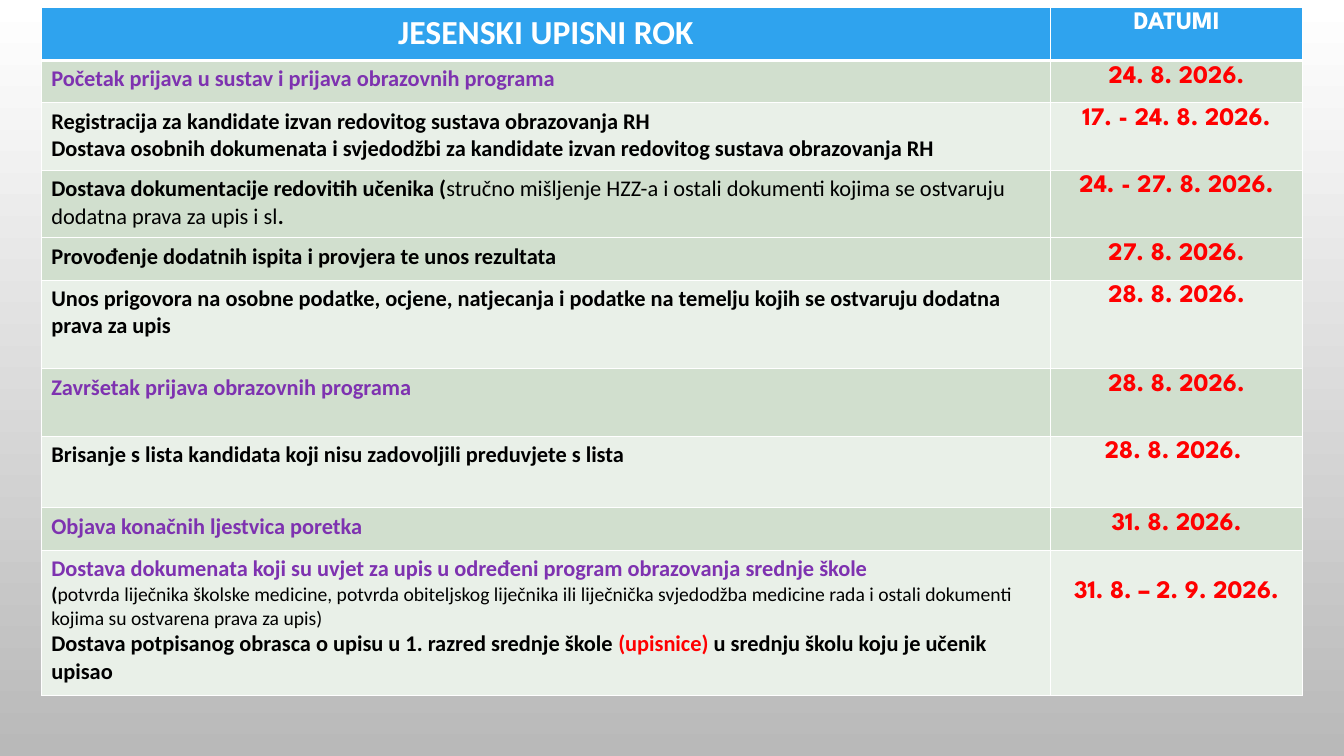
from lxml import etree
from pptx import Presentation
from pptx.dml.color import RGBColor
from pptx.enum.text import PP_ALIGN as Align
from pptx.oxml.ns import qn
from pptx.util import Inches, Pt

COLORS = {
    "white": "FFFFFF", "grey": "B9B9B9", "blue": "2FA3EE", "purple": "7E32B0",
    "black": "000000", "red": "FF0000", "dark": "D1DFCE", "light": "E9F0E8",
}
TEXT_FONT, DATE_FONT = "Calibri", "League Spartan"
LEFT, TOP = 0.41, 0.07
COL_WIDTHS = [10.01, 2.5]
HEADER_HEIGHT = 0.53


def run(text, color="black", bold=True, size=16, font=TEXT_FONT):
    return text, color, bold, size, font


HEADER = [run("JESENSKI UPISNI ROK", "white", size=24),
          run("DATUMI", "white", size=18, font=DATE_FONT)]

# Row height, fill, paragraphs of runs, date
ROWS = [
    (0.42, "dark",
     [[run("Početak prijava u sustav i prijava obrazovnih programa", "purple")]],
     "24. 8. 2026."),
    (0.67, "light",
     [[run("Registracija za kandidate izvan redovitog sustava obrazovanja RH")],
      [run("Dostava osobnih dokumenata i svjedodžbi za kandidate izvan "
           "redovitog sustava obrazovanja RH")]],
     "17. - 24. 8. 2026."),
    (0.67, "dark",
     [[run("Dostava dokumentacije redovitih učenika ("),
       run("stručno mišljenje HZZ-a i ostali dokumenti kojima se ostvaruju "
           "dodatna prava za upis i sl", bold=False),
       run(".")]],
     "24. - 27. 8. 2026."),
    (0.42, "dark",
     [[run("Provođenje dodatnih ispita i provjera te unos rezultata")]],
     "27. 8. 2026."),
    (0.88, "light",
     [[run("Unos prigovora na osobne podatke, ocjene, natjecanja i podatke na "
           "temelju kojih se ostvaruju dodatna prava za upis")]],
     "28. 8. 2026."),
    (0.67, "dark",
     [[run("Završetak prijava obrazovnih programa", "purple")]],
     "28. 8. 2026."),
    (0.71, "light",
     [[run("Brisanje s lista kandidata koji nisu zadovoljili preduvjete s lista")]],
     "28. 8. 2026. "),
    (0.42, "dark",
     [[run("Objava konačnih ljestvica poretka", "purple")]],
     "31. 8. 2026."),
    (1.44, "light",
     [[run("Dostava dokumenata koji su uvjet za upis u određeni program "
           "obrazovanja srednje škole", "purple")],
      [run("(", size=14),
       run("potvrda liječnika školske medicine, potvrda obiteljskog liječnika "
           "ili liječnička svjedodžba medicine rada i ostali dokumenti kojima "
           "su ostvarena prava za upis)", bold=False, size=14)],
      [run("Dostava potpisanog obrasca o upisu u 1. razred srednje škole "),
       run("(upisnice) ", "red"),
       run("u srednju školu koju je učenik upisao")]],
     "31. 8. – 2. 9. 2026."),
]


def rgb(name):
    return RGBColor.from_string(COLORS[name])


def set_borders(cell, top, bottom):
    tcPr = cell._tc.get_or_add_tcPr()
    for side, width in (("L", 1), ("R", 1), ("T", top), ("B", bottom)):
        ln = etree.SubElement(tcPr, qn(f"a:ln{side}"), w=str(Pt(width)))
        fill = etree.SubElement(ln, qn("a:solidFill"))
        etree.SubElement(fill, qn("a:srgbClr"), val=COLORS["white"])


def fill_cell(cell, paragraphs, fill, align, top=1, bottom=1):
    set_borders(cell, top, bottom)
    cell.fill.solid()
    cell.fill.fore_color.rgb = rgb(fill)
    cell.margin_left = cell.margin_right = Inches(0.1)
    cell.margin_top = cell.margin_bottom = Inches(0.05)
    tf = cell.text_frame
    for i, runs in enumerate(paragraphs):
        p = tf.add_paragraph() if i else tf.paragraphs[0]
        p.alignment = align
        for text, color, bold, size, font in runs:
            r = p.add_run()
            r.text = text
            r.font.name, r.font.size, r.font.bold = font, Pt(size), bold
            r.font.color.rgb = rgb(color)


prs = Presentation()
prs.slide_width, prs.slide_height = Inches(13.33), Inches(7.5)
s = prs.slides.add_slide(prs.slide_layouts[6])

# Background, white at the top to grey at the bottom
bg = s.background.fill
bg.gradient()
bg.gradient_angle = 270
for stop, name, position in zip(bg.gradient_stops, ("white", "grey"), (0, 1)):
    stop.color.rgb = rgb(name)
    stop.position = position

# Table grid
heights = [HEADER_HEIGHT] + [row[0] for row in ROWS]
table = s.shapes.add_table(
    len(heights), len(COL_WIDTHS), Inches(LEFT), Inches(TOP),
    Inches(sum(COL_WIDTHS)), Inches(sum(heights))).table
for column, width in zip(table.columns, COL_WIDTHS):
    column.width = Inches(width)
for row, height in zip(table.rows, heights):
    row.height = Inches(height)

# Header row
for j, heading in enumerate(HEADER):
    fill_cell(table.cell(0, j), [[heading]], "blue", Align.CENTER, bottom=3)

# Deadlines
for i, (_, fill, paragraphs, date) in enumerate(ROWS, 1):
    top = 3 if i == 1 else 1
    fill_cell(table.cell(i, 0), paragraphs, fill, Align.LEFT, top)
    date_run = run(date, "red", size=18, font=DATE_FONT)
    fill_cell(table.cell(i, 1), [[date_run]], fill, Align.CENTER, top)

# The last date sits one line lower
table.cell(len(ROWS), 1).margin_top = Inches(0.3)

prs.save("out.pptx")
